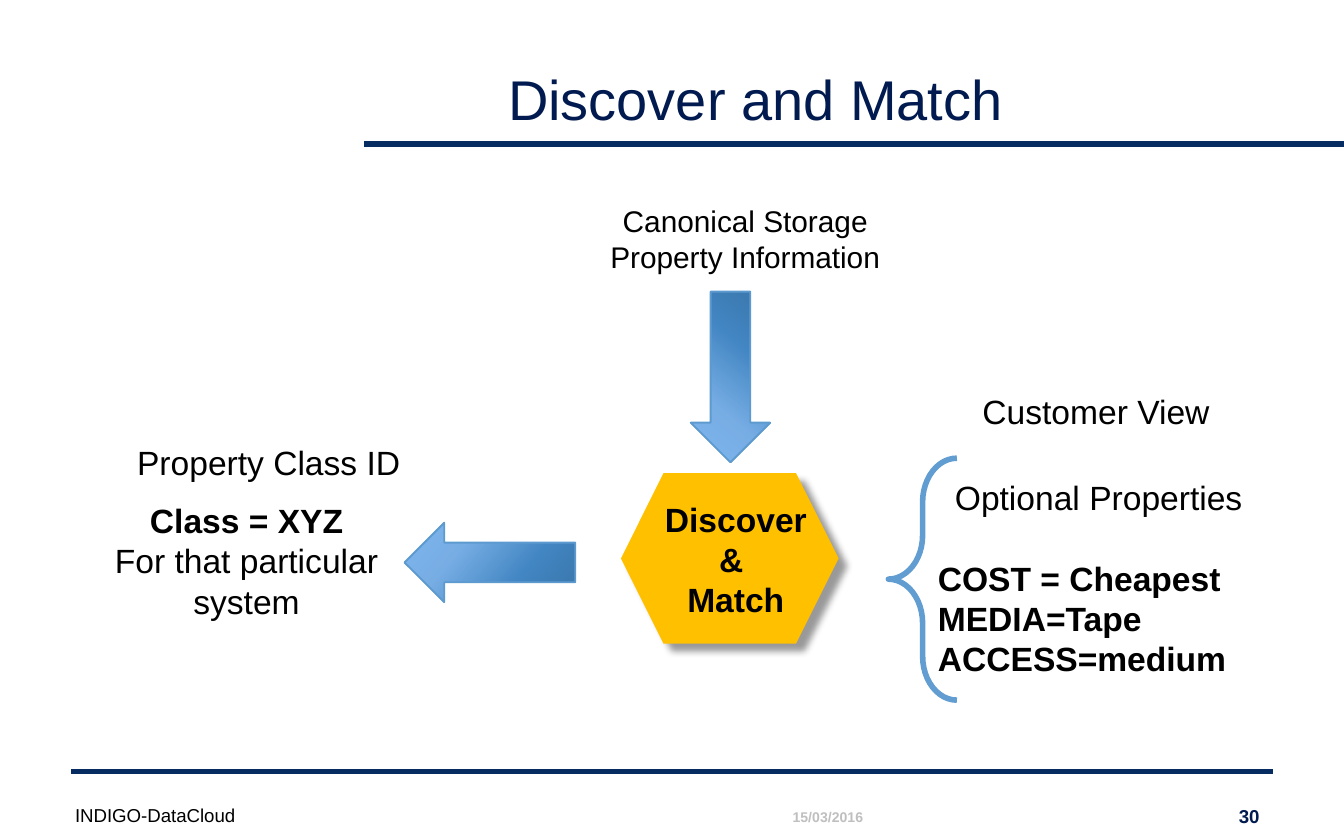
from dataclasses import dataclass

from lxml.etree import SubElement
from pptx import Presentation
from pptx.dml.color import RGBColor as RGB
from pptx.enum.shapes import MSO_CONNECTOR as Conn, MSO_SHAPE as Kind
from pptx.enum.text import MSO_ANCHOR as Anchor, MSO_AUTO_SIZE as Auto, PP_ALIGN as Align
from pptx.oxml import parse_xml
from pptx.oxml.ns import nsdecls, qn
from pptx.util import Inches, Pt

Box = tuple[float, float, float, float]


@dataclass(frozen=True)
class Theme:
    font: str = "Arial"
    navy: str = "011A4F"
    rule: str = "072C62"
    black: str = "000000"
    grey: str = "BFBFBF"
    gold: str = "FFC000"
    edge: str = "5D9ACF"
    brace: str = "629DD1"
    # Position, colour and opacity of each stop, in percent
    fade: tuple = ((0, "69AAEC", 85), (33, "71AAE3", 95),
                   (67, "4387C4", 100), (100, "3A75A9", 100))
    head: float = 30
    body: float = 18
    note: float = 16
    foot: float = 10
    date: float = 7.5


T = Theme()


@dataclass(frozen=True)
class Line:
    text: str
    bold: bool = False
    align: Align = Align.CENTER
    gap: float = 0


@dataclass(frozen=True)
class Label:
    box: Box
    lines: tuple[Line, ...]
    size: float = T.body
    color: str = T.black
    anchor: Anchor = Anchor.TOP
    grow: bool = True


@dataclass(frozen=True)
class Arrow:
    box: Box
    turn: float


def place(box: Box) -> list:
    return [Inches(v) for v in box]


def style(font, size: float, color: str, bold: bool = False) -> None:
    font.name, font.size, font.bold = T.font, Pt(size), bold
    font.color.rgb = RGB.from_string(color)


def stroke(line, color: str, width: float) -> None:
    line.color.rgb = RGB.from_string(color)
    line.width = Pt(width)


def add_rule(slide, left: float, right: float, y: float) -> None:
    rule = slide.shapes.add_connector(Conn.STRAIGHT, *place((left, y, right, y)))
    stroke(rule.line, T.rule, 3)
    SubElement(rule._element.spPr, qn("a:effectLst"))


def add_label(slide, label: Label) -> None:
    frame = slide.shapes.add_textbox(*place(label.box)).text_frame
    frame.word_wrap = not label.grow
    frame.auto_size = Auto.SHAPE_TO_FIT_TEXT if label.grow else Auto.NONE
    frame.vertical_anchor = label.anchor
    for i, line in enumerate(label.lines):
        para = frame.add_paragraph() if i else frame.paragraphs[0]
        para.text, para.alignment = line.text, line.align
        if line.gap:
            para.space_before = Pt(line.gap)
        style(para.font, label.size, label.color, line.bold)


def add_arrow(slide, arrow: Arrow) -> None:
    shape = slide.shapes.add_shape(Kind.RIGHT_ARROW, *place(arrow.box))
    shape.rotation = arrow.turn
    shape.shadow.inherit = False
    stroke(shape.line, T.edge, 1)
    stops = "".join(
        f'<a:gs pos="{pos * 1000}"><a:srgbClr val="{color}">'
        f'<a:alpha val="{alpha * 1000}"/></a:srgbClr></a:gs>'
        for pos, color, alpha in T.fade)
    fill = parse_xml(
        f'<a:gradFill {nsdecls("a")} rotWithShape="1"><a:gsLst>{stops}</a:gsLst>'
        f'<a:lin ang="{220 * 60000}" scaled="0"/></a:gradFill>')
    shape._element.spPr.find(qn("a:prstGeom")).addnext(fill)


def add_hexagon(slide, box: Box) -> None:
    shape = slide.shapes.add_shape(Kind.HEXAGON, *place(box))
    shape.fill.solid()
    shape.fill.fore_color.rgb = RGB.from_string(T.gold)
    shape.line.fill.background()
    shape._element.spPr.append(parse_xml(
        f'<a:effectLst {nsdecls("a")}><a:outerShdw blurRad="{Pt(4)}" '
        f'dist="{Pt(6)}" dir="{45 * 60000}" algn="tl" rotWithShape="0">'
        f'<a:srgbClr val="{T.black}"><a:alpha val="40000"/></a:srgbClr>'
        f'</a:outerShdw></a:effectLst>'))


def add_brace(slide, box: Box) -> None:
    shape = slide.shapes.add_shape(Kind.LEFT_BRACE, *place(box))
    shape.shadow.inherit = False
    shape.adjustments[0], shape.adjustments[1] = 0.64, 0.5
    shape.fill.background()
    stroke(shape.line, T.brace, 3)


def add_title(slide, text: str, box: Box) -> None:
    title = slide.shapes.title
    title.left, title.top, title.width, title.height = place(box)
    frame = title.text_frame
    frame.vertical_anchor = Anchor.BOTTOM
    para = frame.paragraphs[0]
    para.text, para.alignment = text, Align.LEFT
    style(para.font, T.head, T.navy)


FOOT = (
    Label((4.95, 5.97, 2.42, 0.21), (Line("15/03/2016", True),),
          T.date, T.grey, Anchor.MIDDLE, False),
    Label((0.46, 5.93, 7.62, 0.2), (Line("INDIGO-DataCloud", align=Align.LEFT),),
          T.foot, grow=False),
    Label((8.8, 5.97, 0.67, 0.21), (Line("30", True, Align.RIGHT),),
          T.foot, T.navy, Anchor.MIDDLE, False),
)
LABELS = (
    Label((4.82, 3.66, 1.31, 1.01),
          (Line("Discover ", True), Line("& ", True), Line("Match", True))),
    Label((4.35, 1.46, 2.39, 0.64),
          (Line("Canonical Storage"), Line("Property Information")), T.note),
    Label((6.88, 3.5, 2.59, 1.62),
          (Line("Optional Properties"),
           Line("COST = Cheapest", True, Align.LEFT, 21.6),
           Line("MEDIA=Tape", True, Align.LEFT),
           Line("ACCESS=medium", True, Align.LEFT))),
    Label((7.17, 2.86, 1.97, 0.4), (Line("Customer View"),)),
    Label((0.67, 3.67, 2.33, 1.01),
          (Line("Class = XYZ", True), Line("For that particular"), Line("system"))),
    Label((0.88, 3.24, 2.24, 0.4), (Line("Property Class ID"),)),
)
ARROWS = (Arrow((4.8, 2.51, 1.27, 0.59), 90), Arrow((3.01, 3.89, 1.27, 0.59), 180))


def main() -> None:
    deck = Presentation()
    deck.slide_width, deck.slide_height = Inches(10), Inches(6.25)
    slide = deck.slides.add_slide(deck.slide_layouts[5])

    # Frame: rules, title and footer
    add_rule(slide, 2.71, 10, 1.07)
    add_rule(slide, 0.53, 9.47, 5.74)
    add_title(slide, "Discover and Match", (3.68, 0.22, 5.02, 0.81))
    for label in FOOT:
        add_label(slide, label)

    # Diagram: shapes first, then their words
    add_hexagon(slide, (4.62, 3.52, 1.62, 1.27))
    for arrow in ARROWS:
        add_arrow(slide, arrow)
    add_brace(slide, (6.61, 3.41, 0.51, 1.8))
    for label in LABELS:
        add_label(slide, label)

    deck.save("out.pptx")


if __name__ == "__main__":
    main()
